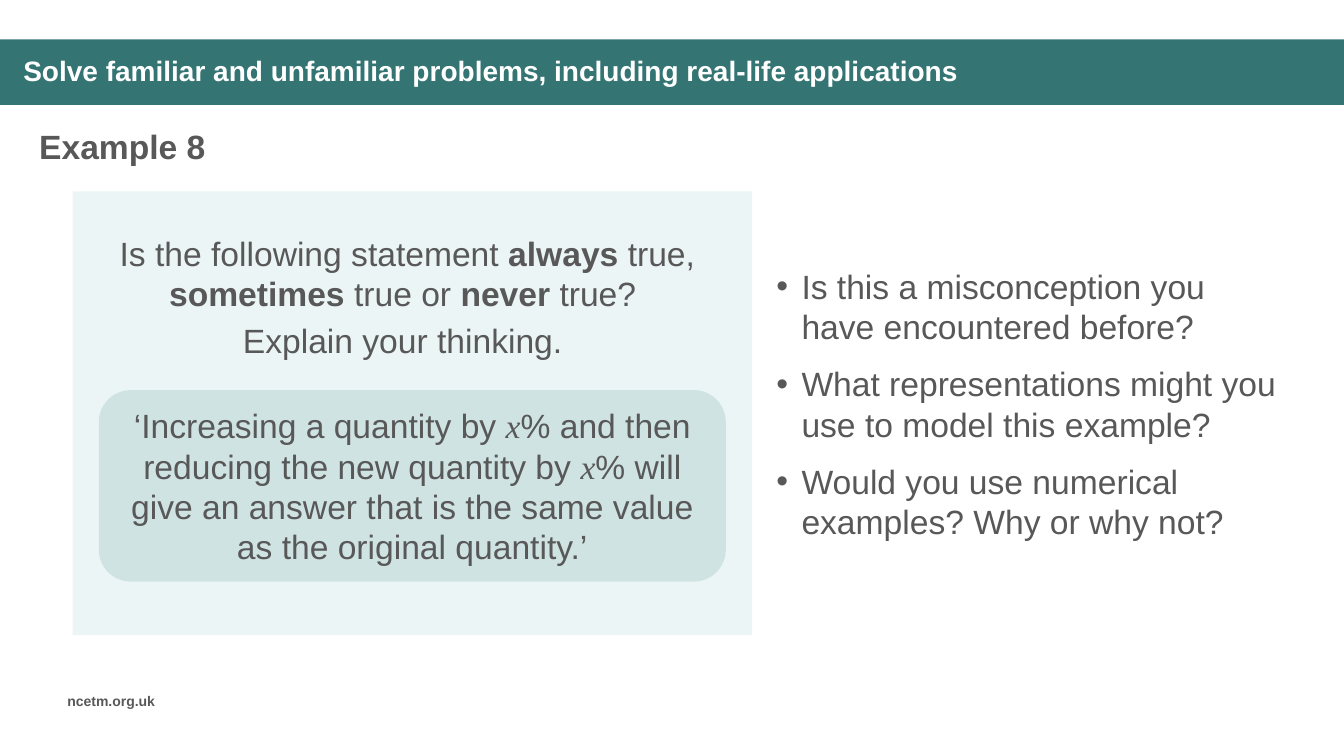
import pptx
import pptx.dml.color
import pptx.enum.shapes
import pptx.enum.text
import pptx.oxml
import pptx.oxml.ns
import pptx.util

RGBColor = pptx.dml.color.RGBColor
ALIGN = pptx.enum.text.PP_ALIGN
SHAPE = pptx.enum.shapes.MSO_SHAPE

TEAL = RGBColor(0x34, 0x75, 0x74)
PALE = RGBColor(0xEB, 0xF5, 0xF5)
MINT = RGBColor(0xD0, 0xE3, 0xE3)
GREY = RGBColor(0x58, 0x58, 0x58)
WHITE = RGBColor(0xFF, 0xFF, 0xFF)

# Each paragraph is a list of runs; a run is (text, style).
PLAIN, BOLD, VARIABLE = "plain", "bold", "variable"
TITLE = [[("Solve familiar and unfamiliar problems, including real-life applications", PLAIN)]]
HEADING = [[("Example 8", PLAIN)]]
FOOTER = [[("ncetm.org.uk", PLAIN)]]
PROMPT = [
    [("Is the following statement ", PLAIN), ("always", BOLD), (" true, ", PLAIN),
     ("sometimes", BOLD), (" true or ", PLAIN), ("never", BOLD), (" true? ", PLAIN)],
    [("Explain your thinking. ", PLAIN)],
]
STATEMENT = [
    [("‘Increasing a quantity by ", PLAIN), ("x", VARIABLE),
     ("% and then reducing the new quantity by ", PLAIN), ("x", VARIABLE),
     ("% will give an answer that is the same value as the original quantity.’", PLAIN)],
]
QUESTIONS = [
    [("Is this a misconception you have encountered before?", PLAIN)],
    [("What representations might you use to model this example?", PLAIN)],
    [("Would you use numerical examples? Why or why not?", PLAIN)],
]

# Left, top, width, height as percentages of the slide.
BAND_AREA = (0, 5.2, 100, 8.67)
TITLE_AREA = (0.98, 6.4, 92.42, 6.27)
HEADING_AREA = (2.18, 16, 49.96, 6.67)
PANEL_AREA = (5.4, 25.33, 50.56, 58.67)
PROMPT_AREA = (6.98, 30.13, 46.66, 19.6)
STATEMENT_AREA = (7.35, 51.6, 46.66, 25.33)
QUESTIONS_AREA = (55.96, 25.33, 40.14, 56.13)
FOOTER_AREA = (4.28, 90.93, 9.08, 3.6)

deck = pptx.Presentation()
deck.slide_width = pptx.util.Inches(13.33)
deck.slide_height = pptx.util.Inches(7.5)
slide = deck.slides.add_slide(deck.slide_layouts[1])


def place(area):
    sides = (deck.slide_width, deck.slide_height) * 2
    return [round(side * share / 100) for side, share in zip(sides, area)]


def add_block(kind, area, colour):
    block = slide.shapes.add_shape(kind, *place(area))
    block.shadow.inherit = False
    block.fill.solid()
    block.fill.fore_color.rgb = colour
    block.line.fill.background()
    return block


def add_text_area(area):
    return slide.shapes.add_textbox(*place(area))


def move(placeholder, area):
    placeholder.left, placeholder.top, placeholder.width, placeholder.height = place(area)


def add_bullet(paragraph):
    properties = paragraph._p.get_or_add_pPr()
    properties.set("marL", str(pptx.util.Inches(0.39)))
    properties.set("indent", str(pptx.util.Inches(-0.25)))
    for tag, name, value in (("a:buFont", "typeface", "Arial"), ("a:buChar", "char", "•")):
        mark = pptx.oxml.parse_xml(f"<{tag} {pptx.oxml.ns.nsdecls('a')}/>")
        mark.set(name, value)
        properties.append(mark)


def write(holder, paragraphs, size=24, colour=GREY, bold=False, align=ALIGN.LEFT,
          anchor=pptx.enum.text.MSO_ANCHOR.TOP, gap=0, after=0, line=1.0, bullets=False):
    frame = holder.text_frame
    frame.word_wrap = True
    frame.auto_size = pptx.enum.text.MSO_AUTO_SIZE.NONE
    frame.vertical_anchor = anchor
    for number, runs in enumerate(paragraphs):
        paragraph = frame.add_paragraph() if number else frame.paragraphs[0]
        if bullets:
            add_bullet(paragraph)
        paragraph.alignment = align
        paragraph.line_spacing = line
        paragraph.space_before = pptx.util.Pt(gap if number else 0)
        paragraph.space_after = pptx.util.Pt(after)
        paragraph.font.name = "Arial"
        paragraph.font.size = pptx.util.Pt(size)
        paragraph.font.bold = bold
        paragraph.font.color.rgb = colour
        for text, style in runs:
            run = paragraph.add_run()
            run.text = text
            if style == BOLD:
                run.font.bold = True
            elif style == VARIABLE:
                run.font.name = "Times New Roman"
                run.font.italic = True


MIDDLE = pptx.enum.text.MSO_ANCHOR.MIDDLE
title = slide.shapes.title
questions = slide.placeholders[1]

band = add_block(SHAPE.RECTANGLE, BAND_AREA, TEAL)
title.element.addprevious(band.element)
move(title, TITLE_AREA)
write(title, TITLE, size=20, colour=WHITE, bold=True, anchor=MIDDLE, line=0.9)
write(add_text_area(HEADING_AREA), HEADING, bold=True)

move(questions, QUESTIONS_AREA)
write(questions, QUESTIONS, anchor=MIDDLE, after=12, bullets=True)

add_block(SHAPE.RECTANGLE, PANEL_AREA, PALE)
write(add_text_area(PROMPT_AREA), PROMPT, align=ALIGN.CENTER, gap=5)
statement = add_block(SHAPE.ROUNDED_RECTANGLE, STATEMENT_AREA, MINT)
write(statement, STATEMENT, align=ALIGN.CENTER, anchor=MIDDLE)

write(add_text_area(FOOTER_AREA), FOOTER, size=10, bold=True)

deck.save("out.pptx")
